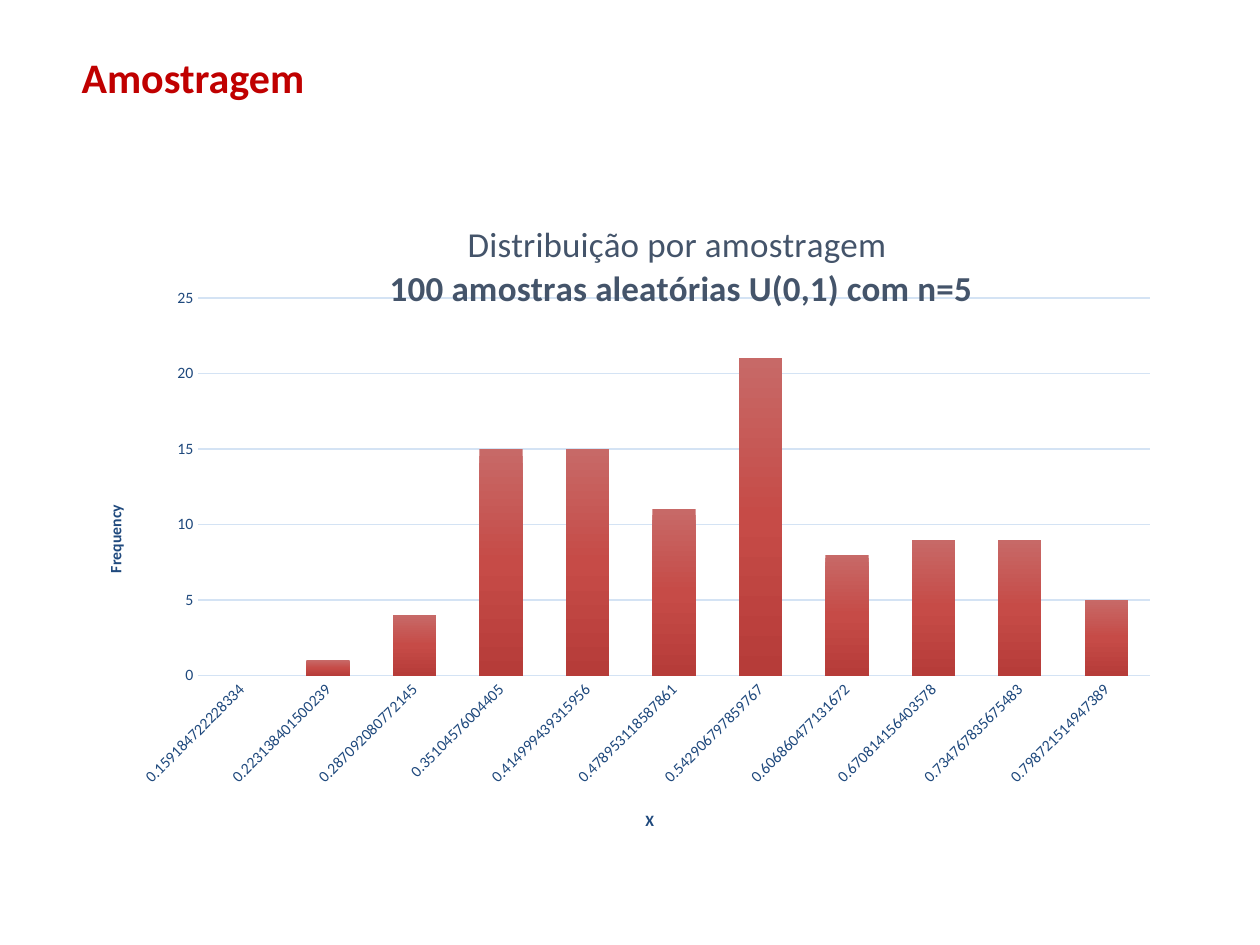
"""Build the sampling distribution slide with its histogram."""
from copy import deepcopy
from dataclasses import dataclass
from typing import Any

from lxml.etree import SubElement
from pptx import Presentation
from pptx.chart.data import CategoryChartData
from pptx.dml.color import RGBColor
from pptx.enum.chart import XL_CHART_TYPE, XL_TICK_MARK
from pptx.oxml.ns import qn
from pptx.util import Inches, Pt

NAVY, SLATE, PALE, RED = "1F497D", "44546A", "D4E3F4", "C00000"
BAR_GRADIENT = ((0, "C76967"), (0.5, "C64B47"), (1, "B63C39"))
FREQUENCIES = {
    "0.159184722228334": 0,
    "0.223138401500239": 1,
    "0.287092080772145": 4,
    "0.35104576004405": 15,
    "0.414999439315956": 15,
    "0.478953118587861": 11,
    "0.542906797859767": 21,
    "0.606860477131672": 8,
    "0.670814156403578": 9,
    "0.734767835675483": 9,
    "0.798721514947389": 5,
}


@dataclass(frozen=True)
class TitleLine:
    text: str
    size: int
    color: str
    bold: bool


@dataclass(frozen=True)
class AxisStyle:
    axis: Any
    title: TitleLine
    position: dict[str, float]
    line: str | None


def rgb(value: str) -> RGBColor:
    """Turn a hex string into a colour."""
    return RGBColor.from_string(value)


def style_font(font: Any, size: int, color: str, bold: bool) -> None:
    """Apply the slide's typeface with the given look."""
    for attribute, value in {"name": "Calibri", "size": Pt(size), "bold": bold}.items():
        setattr(font, attribute, value)
    font.color.rgb = rgb(color)


def write_lines(frame: Any, lines: list[TitleLine]) -> None:
    """Write each line as one paragraph."""
    for index, line in enumerate(lines):
        paragraph = frame.add_paragraph() if index else frame.paragraphs[0]
        run = paragraph.add_run()
        run.text = line.text
        style_font(run.font, line.size, line.color, line.bold)


def place(element: Any, index: int, position: dict[str, float], inner: bool = False) -> None:
    """Give a chart part a manual layout in fractions of the chart."""
    for old in element.findall(qn("c:layout")):
        element.remove(old)
    layout = element.makeelement(qn("c:layout"), {})
    element.insert(index, layout)
    manual = SubElement(layout, qn("c:manualLayout"))
    settings = {"layoutTarget": "inner"} if inner else {}
    settings |= {"xMode": "edge", "yMode": "edge"} | position
    for tag, value in settings.items():
        SubElement(manual, qn(f"c:{tag}")).set("val", str(value))


def style_line(line: Any, color: str | None) -> None:
    """Draw a thin line, or none without a colour."""
    if color is None:
        line.fill.background()
    else:
        line.color.rgb = rgb(color)
        line.width = Pt(0.75)


def style_axis(style: AxisStyle) -> None:
    """Set an axis's labels, line and title."""
    axis = style.axis
    for attribute in ("major_tick_mark", "minor_tick_mark"):
        setattr(axis, attribute, XL_TICK_MARK.NONE)
    style_font(axis.tick_labels.font, 9, NAVY, False)
    style_line(axis.format.line, style.line)
    write_lines(axis.axis_title.text_frame, [style.title])
    place(axis.axis_title._element, 1, style.position)


def fill_bars(series: Any) -> None:
    """Fill the bars from top to bottom with the red gradient."""
    fill = series.format.fill
    fill.gradient()
    fill.gradient_angle = 270
    stop_list = series._element.xpath(".//a:gsLst")[0]
    stop_list.append(deepcopy(stop_list[-1]))
    for stop, (position, color) in zip(fill.gradient_stops, BAR_GRADIENT):
        stop.position = position
        stop.color.rgb = rgb(color)


def add_histogram(slide: Any) -> None:
    """Add the histogram of sample means."""
    data = CategoryChartData()
    data.categories = list(FREQUENCIES)
    data.add_series("Series 1", list(FREQUENCIES.values()))
    chart = slide.shapes.add_chart(
        XL_CHART_TYPE.COLUMN_CLUSTERED,
        Inches(0.55), Inches(1.23), Inches(8.75), Inches(5.51), data,
    ).chart
    style_font(chart.font, 10, "000000", False)
    chart.has_legend = False
    write_lines(chart.chart_title.text_frame, [
        TitleLine("Distribuição por amostragem", 20, SLATE, False),
        TitleLine(" 100 amostras aleatórias U(0,1) com n=5", 20, SLATE, True),
    ])
    place(chart.chart_title._element, 1, {"x": 0.28, "y": 0.09})
    plot_area = chart._chartSpace.chart.plotArea
    place(plot_area, 0, {"x": 0.117, "y": 0.206, "w": 0.863, "h": 0.544}, inner=True)

    values, bins = chart.value_axis, chart.category_axis
    style_axis(AxisStyle(bins, TitleLine("X", 9, NAVY, True), {"x": 0.52, "y": 0.94}, PALE))
    style_axis(AxisStyle(values, TitleLine("Frequency", 9, NAVY, True), {"x": 0.03, "y": 0.5}, None))
    bins._element.xpath("./c:txPr/a:bodyPr")[0].set("rot", "-2700000")
    for attribute, value in {"minimum_scale": 0, "maximum_scale": 25, "major_unit": 5}.items():
        setattr(values, attribute, value)
    style_line(values.major_gridlines.format.line, PALE)

    plot = chart.plots[0]
    for attribute, value in {"gap_width": 100, "overlap": -24, "vary_by_categories": False}.items():
        setattr(plot, attribute, value)
    fill_bars(plot.series[0])


def main() -> None:
    """Build and save the slide."""
    deck = Presentation()
    deck.slide_width, deck.slide_height = Inches(10), Inches(7.5)
    slide = deck.slides.add_slide(deck.slide_layouts[6])
    heading = slide.shapes.add_textbox(Inches(0.55), Inches(0.36), Inches(5.83), Inches(0.5))
    heading.text_frame.word_wrap = True
    write_lines(heading.text_frame, [TitleLine("Amostragem", 24, RED, True)])
    add_histogram(slide)
    deck.save("out.pptx")


if __name__ == "__main__":
    main()
